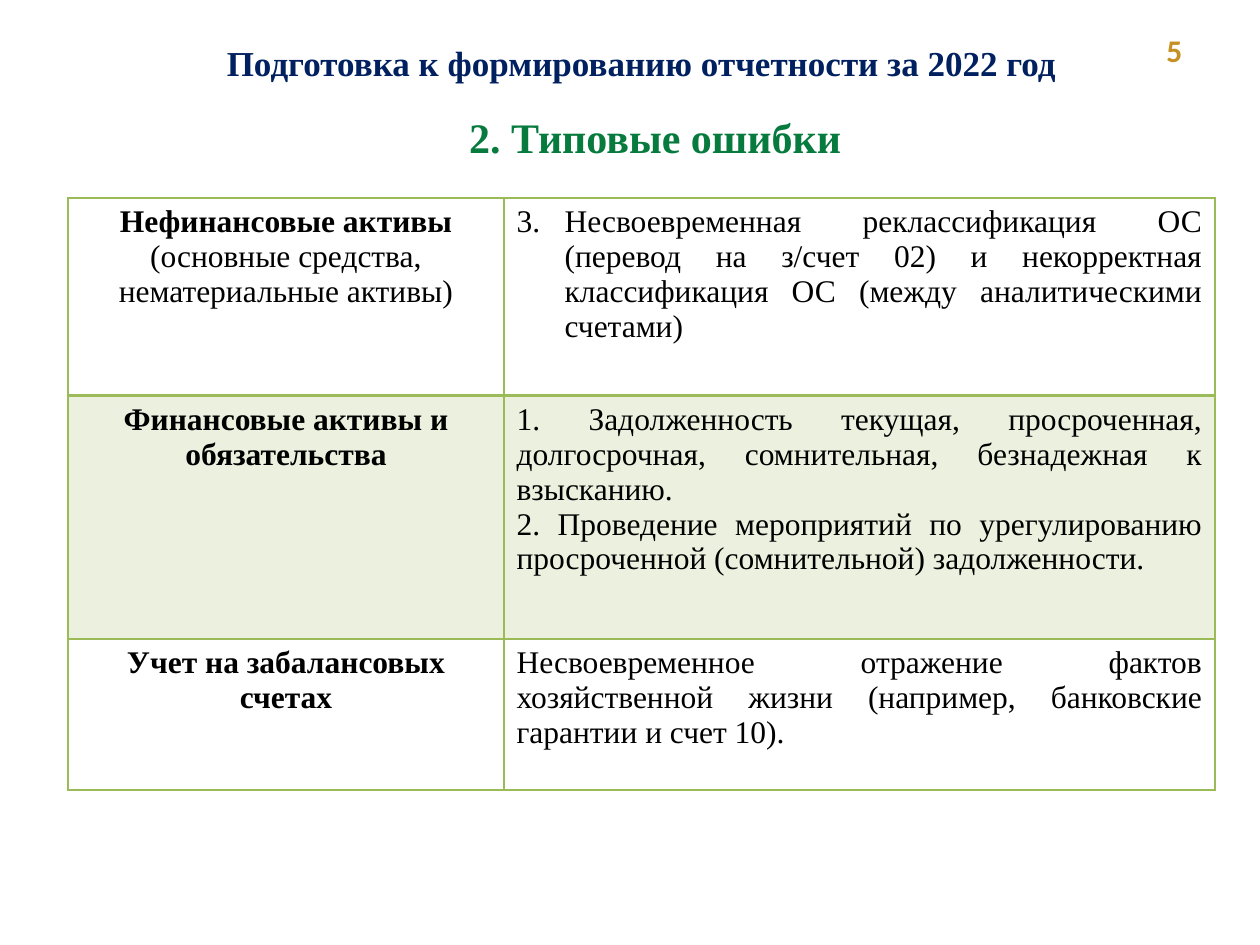
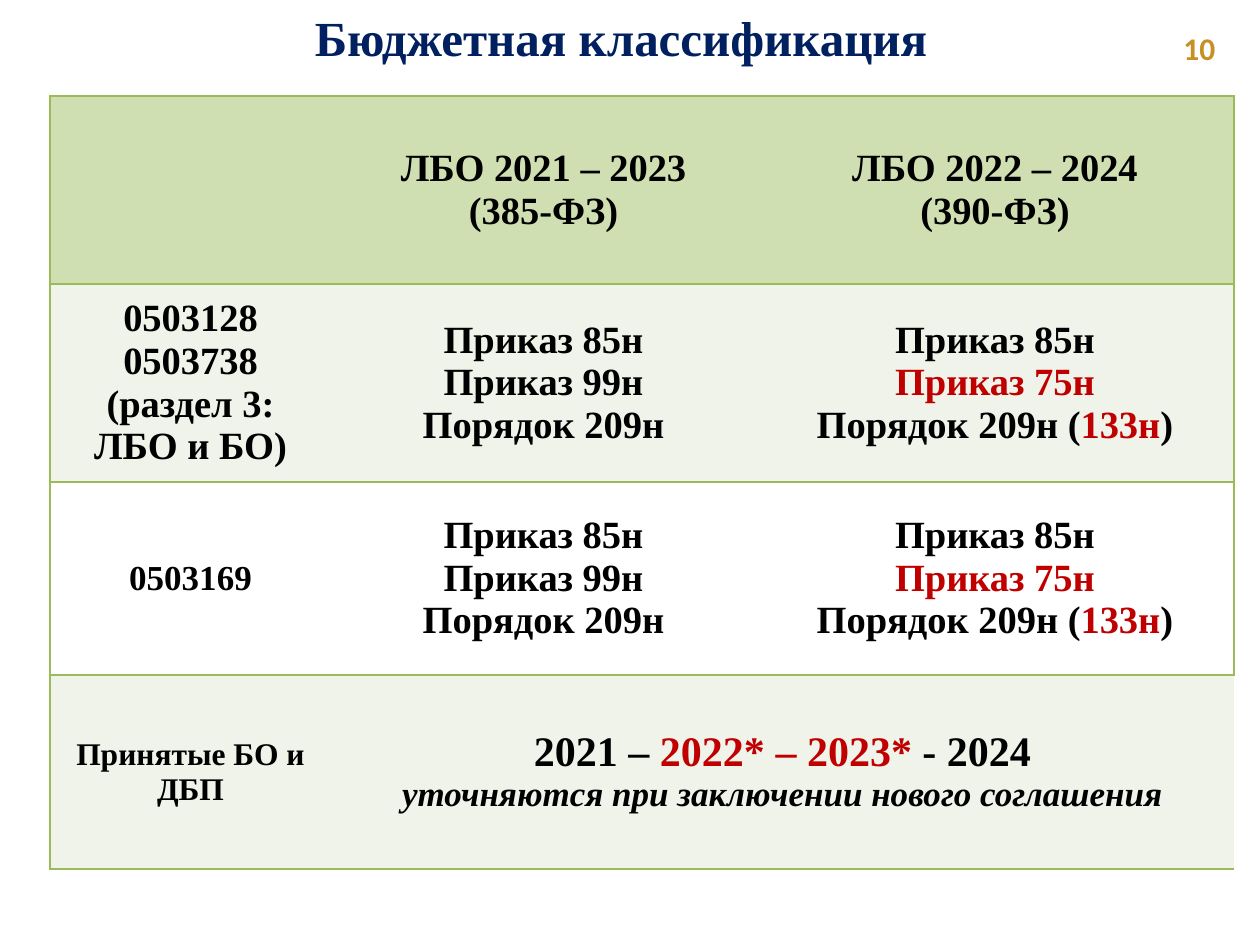
from lxml.etree import SubElement
from pptx import Presentation
from pptx.dml.color import RGBColor
from pptx.enum.text import MSO_ANCHOR as ANCHOR, PP_ALIGN as ALIGN
from pptx.oxml.ns import qn
from pptx.util import Emu, Pt

SERIF, SANS = "Times New Roman", "Calibri"
NAVY, GREEN, GOLD, RED, BLACK = "002060", "077A3E", "C79023", "C00000", "000000"
LINE, HEADER, BAND, PALE, WHITE = "9BBB59", "D0DFB1", "EBF1DE", "EFF3EA", "FFFFFF"


def px(n):
    return Emu(round(n * 914400 / 126))


def rgb(color):
    return RGBColor.from_string(color)


def run(text, **style):
    return text, style


def write(tf, paragraphs, align=ALIGN.CENTER, **base):
    """Fill a text frame; each paragraph is a string or a list of runs."""
    for i, runs in enumerate(paragraphs):
        p = tf.paragraphs[0] if i == 0 else tf.add_paragraph()
        p.alignment = align
        for text, style in [run(runs)] if isinstance(runs, str) else runs:
            look = {"size": 18, "font": SERIF, "color": BLACK, "bold": True,
                    "italic": False, **base, **style}
            r = p.add_run()
            r.text = text
            r.font.name = look["font"]
            r.font.size = Pt(look["size"])
            r.font.bold = look["bold"]
            r.font.italic = look["italic"]
            r.font.color.rgb = rgb(look["color"])


def add_label(slide, box, text, align=ALIGN.CENTER, **style):
    tf = slide.shapes.add_textbox(*map(px, box)).text_frame
    tf.word_wrap = True
    write(tf, [text], align, **style)


def add_title(slide, box, text, size):
    add_label(slide, box, text, size=size, color=NAVY)


def add_page_number(slide, box, number):
    add_label(slide, box, number, ALIGN.LEFT, font=SANS, color=GOLD)


def number_from(p, start, indent):
    pPr = p._p.get_or_add_pPr()
    pPr.set("marL", str(px(indent)))
    pPr.set("indent", str(-px(indent)))
    SubElement(pPr, qn("a:buAutoNum"), type="arabicPeriod", startAt=str(start))


def set_borders(cell, left=1, right=1, top=1, bottom=1):
    """Widths are in points; 0 hides the edge."""
    tcPr = cell._tc.get_or_add_tcPr()
    for side, width in zip("LRTB", (left, right, top, bottom)):
        ln = SubElement(tcPr, qn(f"a:ln{side}"), w=str(Pt(width)))
        if width:
            fill = SubElement(ln, qn("a:solidFill"))
            SubElement(fill, qn("a:srgbClr"), val=LINE)
        else:
            SubElement(ln, qn("a:noFill"))


def set_fill(cell, color):
    cell.fill.solid()
    cell.fill.fore_color.rgb = rgb(color)


def add_grid(slide, left, top, widths, heights):
    frame = slide.shapes.add_table(len(heights), len(widths), px(left), px(top),
                                   px(sum(widths)), px(sum(heights)))
    table = frame.table
    table.first_row = table.horz_banding = False
    for column, width in zip(table.columns, widths):
        column.width = px(width)
    for row, height in zip(table.rows, heights):
        row.height = px(height)
    return table


def add_errors_table(slide, left, top):
    rows = [
        ([[run("Нефинансовые активы "),
           run("(основные средства, нематериальные активы)", bold=False)]],
         ["Несвоевременная реклассификация ОС (перевод на з/счет 02) и некорректная "
          "классификация ОС (между аналитическими счетами)"]),
        (["Финансовые активы и обязательства"],
         ["1. Задолженность текущая, просроченная, долгосрочная, сомнительная, "
          "безнадежная к взысканию.",
          "2. Проведение мероприятий по урегулированию просроченной (сомнительной) "
          "задолженности."]),
        (["Учет на забалансовых счетах"],
         ["Несвоевременное отражение фактов хозяйственной жизни (например, "
          "банковские гарантии и счет 10)."]),
    ]
    table = add_grid(slide, left, top, [436, 711], [198, 243, 151])
    for i, (topic, errors) in enumerate(rows):
        for j in range(2):
            cell = table.cell(i, j)
            set_borders(cell, top=2 if i == 1 else 1, bottom=2 if i == 0 else 1)
            set_fill(cell, BAND if i == 1 else WHITE)
        write(table.cell(i, 0).text_frame, topic)
        write(table.cell(i, 1).text_frame, errors, ALIGN.JUSTIFY, bold=False)
    number_from(table.cell(0, 1).text_frame.paragraphs[0], start=3, indent=48)


def add_classification_table(slide, left, top):
    old_orders = ["Приказ 85н", "Приказ 99н", "Порядок 209н"]
    new_orders = ["Приказ 85н", [run("Приказ 75н", color=RED)],
                  [run("Порядок 209н ("), run("133н", color=RED), run(")")]]
    years = [run("2021 – ", size=24), run("2022* – 2023* ", size=24, color=RED),
             run("- 2024", size=24)]
    note = [run("уточняются при заключении нового соглашения", size=20, italic=True)]
    rows = [
        (HEADER, [[], ["ЛБО 2021 – 2023", "(385-ФЗ)"], ["ЛБО 2022 – 2024", "(390-ФЗ)"]]),
        (PALE, [["0503128", "0503738", "(раздел 3: ЛБО и БО)"], old_orders, new_orders]),
        (WHITE, [[[run("0503169", size=20)]], old_orders, new_orders]),
        (PALE, [[[run("Принятые БО и ДБП", size=18)]], [years, note], []]),
    ]
    table = add_grid(slide, left, top, [281, 425, 478], [188, 198, 193, 194])
    table.cell(3, 1).merge(table.cell(3, 2))
    for i, (color, contents) in enumerate(rows):
        for j, paragraphs in enumerate(contents):
            cell = table.cell(i, j)
            set_borders(cell, left=int(j == 0), right=int(j == 2))
            set_fill(cell, color)
            cell.vertical_anchor = ANCHOR.MIDDLE
            write(cell.text_frame, paragraphs, size=22)


def build_errors_slide(slide):
    add_title(slide, (199, 35, 885, 55), "Подготовка к формированию отчетности за 2022 год", 20)
    add_page_number(slide, (1154, 25, 84, 50), "5")
    add_label(slide, (105, 105, 1100, 63), "2. Типовые ошибки", size=24, color=GREEN)
    add_errors_table(slide, 68, 198)


def build_classification_slide(slide):
    add_title(slide, (178, 1, 886, 72), "Бюджетная классификация", 28)
    add_page_number(slide, (1171, 23, 68, 50), "10")
    add_classification_table(slide, 50, 96)


def main():
    prs = Presentation()
    prs.slide_width, prs.slide_height = px(1260), px(945)
    for build in (build_errors_slide, build_classification_slide):
        build(prs.slides.add_slide(prs.slide_layouts[6]))
    prs.save("out.pptx")


if __name__ == "__main__":
    main()
